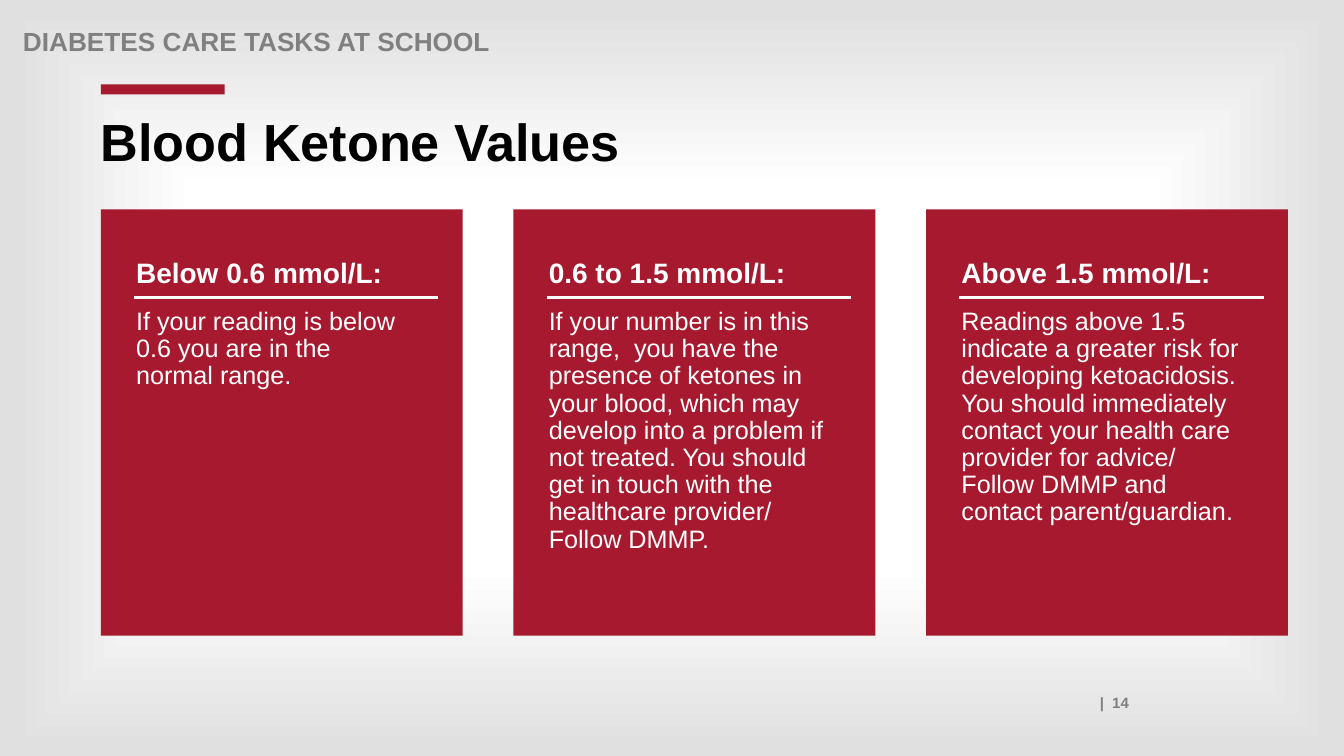
from lxml import etree
from pptx import Presentation
from pptx import util as u
from pptx.dml.color import RGBColor
from pptx.enum import shapes, text
from pptx.oxml import parse_xml
from pptx.oxml.ns import qn

FONT = "Arial"
RED, WHITE, GREY, BLACK = "A6192E", "FFFFFF", "808080", "000000"
CARD_WIDTH, CARD_HEIGHT, CARD_PITCH = 9.12, 10.74, 10.4

CARDS = [
    ("Below 0.6 mmol/L:",
     "If your reading is below 0.6 you are in the normal range."),
    ("0.6 to 1.5 mmol/L:",
     "If your number is in this range,  you have the presence of ketones in your "
     "blood, which may develop into a problem if not treated. You should get in "
     "touch with the healthcare provider/ Follow DMMP."),
    ("Above 1.5 mmol/L:",
     "Readings above 1.5 indicate a greater risk for developing ketoacidosis. You "
     "should immediately contact your health care provider for advice/ Follow DMMP "
     "and contact parent/guardian."),
]


def color(hex_string):
    return RGBColor.from_string(hex_string)


def box_in_cm(*lengths):
    return [u.Cm(length) for length in lengths]


def add_run(paragraph, words, size, hex_string, bold=True):
    run = paragraph.add_run()
    run.text = words
    run.font.name = FONT
    run.font.size = u.Pt(size)
    run.font.bold = bold
    run.font.color.rgb = color(hex_string)


def add_text_frame(slide, left, top, width, height):
    frame = slide.shapes.add_textbox(*box_in_cm(left, top, width, height)).text_frame
    frame.word_wrap = True
    return frame


def add_bar(slide, left, top, width, height):
    shape = slide.shapes.add_shape(shapes.MSO_SHAPE.RECTANGLE,
                                   *box_in_cm(left, top, width, height))
    shape.shadow.inherit = False
    shape.fill.solid()
    shape.fill.fore_color.rgb = color(RED)
    shape.line.fill.background()


def add_rule(slide, left, top, width):
    line = slide.shapes.add_connector(shapes.MSO_CONNECTOR.STRAIGHT,
                                      *box_in_cm(left, top, left + width, top))
    line.line.color.rgb = color(WHITE)
    line.line.width = u.Pt(2)
    etree.SubElement(line._element.spPr, qn("a:effectLst"))


def set_background(slide):
    # Rectangular gradient, white in the centre and grey at the edges
    stops = "".join(
        f'<a:gs pos="{percent * 1000}"><a:srgbClr val="{value}"/></a:gs>'
        for percent, value in ((12, WHITE), (50, WHITE), (98, "E0E0E0")))
    gradient = parse_xml(
        '<a:gradFill xmlns:a="http://schemas.openxmlformats.org/drawingml/2006/main" '
        f'rotWithShape="1"><a:gsLst>{stops}</a:gsLst><a:path path="rect">'
        '<a:fillToRect l="50000" t="50000" r="50000" b="50000"/></a:path></a:gradFill>')
    slide.background.fill.solid()
    properties = slide.background._cSld.bg.bgPr
    properties.replace(properties[0], gradient)


def add_header(slide, left, top, width, height):
    paragraph = add_text_frame(slide, left, top, width, height).paragraphs[0]
    paragraph.line_spacing = 0.9
    add_run(paragraph, "DIABETES CARE TASKS AT SCHOOL", 18.7, GREY)


def add_title(slide, left, top, width, height):
    # Accent bar above the title
    add_bar(slide, left, top - 0.79, 3.12, 0.25)
    title = slide.shapes.title
    title.left, title.top, title.width, title.height = box_in_cm(left, top, width, height)
    frame = title.text_frame
    frame.margin_left = frame.margin_top = frame.margin_right = frame.margin_bottom = 0
    frame.vertical_anchor = text.MSO_ANCHOR.TOP
    frame.auto_size = text.MSO_AUTO_SIZE.NONE
    paragraph = frame.paragraphs[0]
    paragraph.alignment = text.PP_ALIGN.LEFT
    paragraph.line_spacing = 0.9
    paragraph.space_before = u.Pt(0)
    add_run(paragraph, "Blood Ketone Values", 37.3, BLACK)


def add_card(slide, left, top, heading, advice):
    add_bar(slide, left, top, CARD_WIDTH, CARD_HEIGHT)
    frame = add_text_frame(slide, left + 0.64, top + 1.14, 7.52, CARD_HEIGHT - 1.14)
    heading_paragraph = frame.paragraphs[0]
    heading_paragraph.line_spacing = 0.9
    add_run(heading_paragraph, heading, 20, WHITE)
    advice_paragraph = frame.add_paragraph()
    advice_paragraph.line_spacing = 0.9
    advice_paragraph.space_before = u.Pt(13.3)
    add_run(advice_paragraph, advice, 18, WHITE, bold=False)
    # Rule between heading and advice
    add_rule(slide, left + 0.84, top + 2.21, 7.67)


def add_page_number(slide, left, top, width, height):
    paragraph = add_text_frame(slide, left, top, width, height).paragraphs[0]
    paragraph.alignment = text.PP_ALIGN.RIGHT
    add_run(paragraph, "|  14", 10.7, GREY)


def main():
    presentation = Presentation()
    presentation.slide_width, presentation.slide_height = box_in_cm(33.87, 19.05)
    slide = presentation.slides.add_slide(presentation.slide_layouts[5])
    set_background(slide)
    add_header(slide, 0.33, 0.61, 27.94, 0.71)
    add_title(slide, 2.54, 2.92, 28.8, 1.45)
    for index, (heading, advice) in enumerate(CARDS):
        add_card(slide, 2.54 + index * CARD_PITCH, 5.28, heading, advice)
    add_page_number(slide, 3.07, 17.35, 25.63, 0.71)
    presentation.save("out.pptx")


if __name__ == "__main__":
    main()
